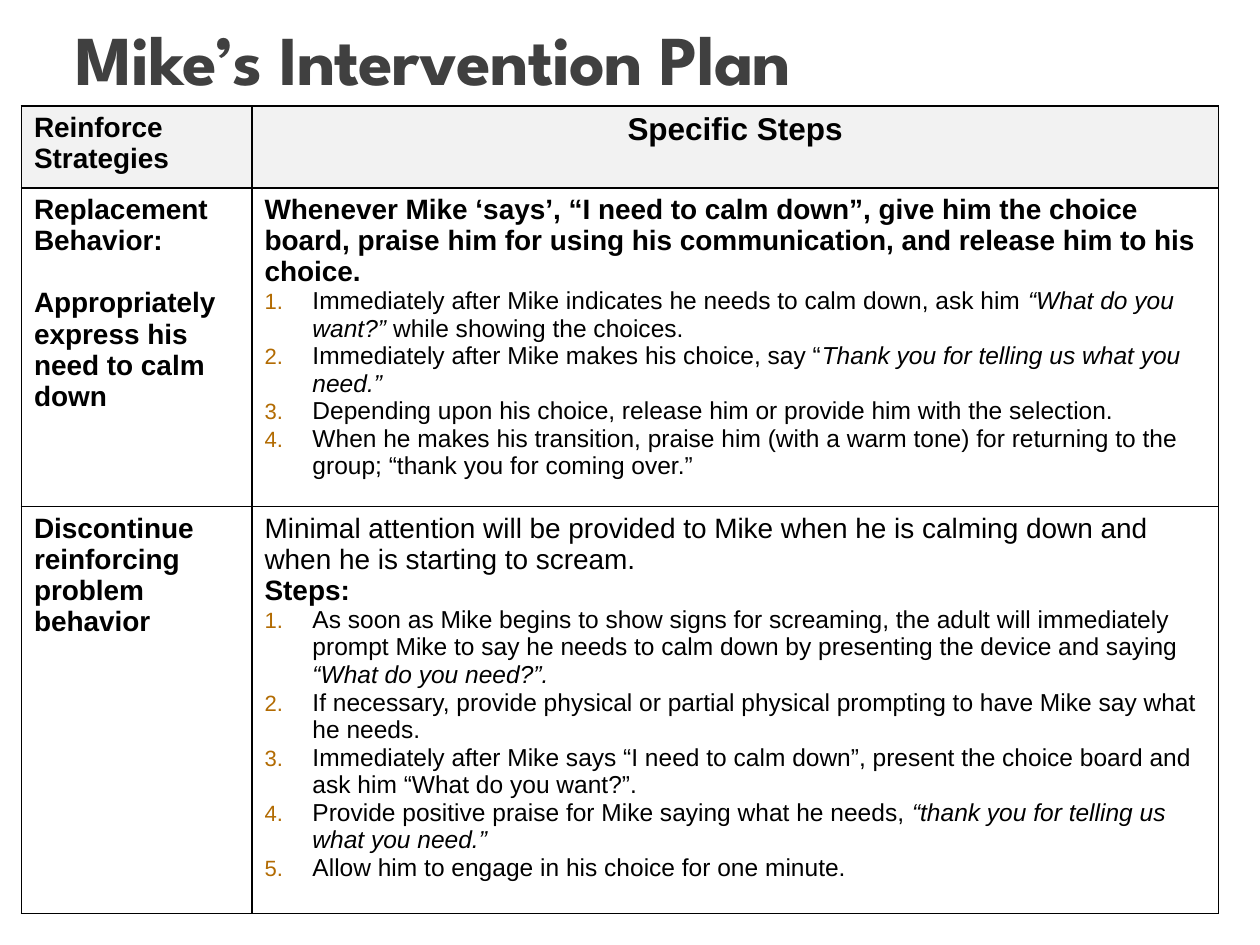
import pptx
import pptx.dml.color
import pptx.enum.text
import pptx.oxml
import pptx.oxml.ns
import pptx.util
from pptx.util import Inches

BODY_FONT = "Arial"
TITLE_FONT = "League Spartan"
COLUMN_WIDTHS = [1.83, 7.67]
ROW_HEIGHTS = [0.65, 2.53, 3.23]

REPLACEMENT_SUMMARY = (
    "Whenever Mike ‘says’, “I need to calm down”, give him the choice board, "
    "praise him for using his communication, and release him to his choice."
)
REPLACEMENT_STEPS = [
    ["Immediately after Mike indicates he needs to calm down, ask him ",
     "“What do you want?”", " while showing the choices."],
    ["Immediately after Mike makes his choice, say “",
     "Thank you for telling us what you need.”"],
    ["Depending upon his choice, release him or provide him with the selection."],
    ["When he makes his transition, praise him (with a warm tone) for returning "
     "to the group; “thank you for coming over.”"],
]
DISCONTINUE_SUMMARY = (
    "Minimal attention will be provided to Mike when he is calming down and "
    "when he is starting to scream."
)
DISCONTINUE_STEPS = [
    ["As soon as Mike begins to show signs for screaming, the adult will "
     "immediately prompt Mike to say he needs to calm down by presenting the "
     "device and saying ", "“What do you need?”."],
    ["If necessary, provide physical or partial physical prompting to have Mike "
     "say what he needs."],
    ["Immediately after Mike says “I need to calm down”, present the choice "
     "board and ask him “What do you want?”."],
    ["Provide positive praise for Mike saying what he needs, ",
     "“thank you for telling us what you need.”"],
    ["Allow him to engage in his choice for one minute."],
]


def color(hex_string):
    return pptx.dml.color.RGBColor.from_string(hex_string)


def xml_element(markup):
    namespace = pptx.oxml.ns.nsdecls("a")
    return pptx.oxml.parse_xml(markup.replace(">", f" {namespace}>", 1))


def format_run(run, size, bold=False, italic=False, font=BODY_FONT, fill="000000"):
    run.font.size = pptx.util.Pt(size)
    run.font.bold = bold
    run.font.italic = italic
    run.font.name = font
    run.font.color.rgb = color(fill)


def next_paragraph(text_frame):
    first = text_frame.paragraphs[0]
    return text_frame.add_paragraph() if first.runs else first


def add_statement(text_frame, text, size=16, bold=True):
    paragraph = next_paragraph(text_frame)
    paragraph.text = text
    format_run(paragraph.runs[0], size, bold)
    return paragraph


def add_steps(text_frame, steps):
    for step in steps:
        paragraph = next_paragraph(text_frame)
        properties = paragraph._p.get_or_add_pPr()
        properties.set("marL", str(Inches(0.38)))
        properties.set("indent", str(Inches(-0.38)))
        for markup in (
            '<a:buClr><a:srgbClr val="B26B02"/></a:buClr>',
            '<a:buSzPct val="90000"></a:buSzPct>',
            '<a:buFont typeface="Arial"></a:buFont>',
            '<a:buAutoNum type="arabicPeriod"></a:buAutoNum>',
        ):
            properties.append(xml_element(markup))
        for index, text in enumerate(step):
            run = paragraph.add_run()
            run.text = text
            format_run(run, 14, italic=index % 2 == 1)


def style_cell(cell, fill):
    properties = cell._tc.get_or_add_tcPr()
    for side in ("lnL", "lnR", "lnT", "lnB"):
        properties.append(xml_element(
            f'<a:{side} w="12700"><a:solidFill><a:srgbClr val="000000"/>'
            f'</a:solidFill></a:{side}>'
        ))
    cell.fill.solid()
    cell.fill.fore_color.rgb = color(fill)


def add_plan_table(slide):
    table = slide.shapes.add_table(
        len(ROW_HEIGHTS), len(COLUMN_WIDTHS),
        Inches(0.17), Inches(0.84), Inches(9.5), Inches(6.41),
    ).table
    table.first_row = False
    table.horz_banding = False
    for column, width in zip(table.columns, COLUMN_WIDTHS):
        column.width = Inches(width)
    for index, height in enumerate(ROW_HEIGHTS):
        table.rows[index].height = Inches(height)
        for cell in table.rows[index].cells:
            style_cell(cell, "F2F2F2" if index == 0 else "FFFFFF")
    return table


def add_title(slide, text):
    shape = slide.shapes.add_textbox(
        Inches(0.5), Inches(0.03), Inches(9.08), Inches(0.81)
    )
    text_frame = shape.text_frame
    text_frame.word_wrap = True
    text_frame.vertical_anchor = pptx.enum.text.MSO_ANCHOR.BOTTOM
    text_frame.text = text
    paragraph = text_frame.paragraphs[0]
    paragraph.line_spacing = 0.85
    run = paragraph.runs[0]
    format_run(run, 40, bold=True, font=TITLE_FONT, fill="404040")
    run.font._element.set("spc", "-50")


def main():
    presentation = pptx.Presentation()
    presentation.slide_width = Inches(10)
    presentation.slide_height = Inches(7.5)
    slide = presentation.slides.add_slide(presentation.slide_layouts[6])

    table = add_plan_table(slide)
    add_statement(table.cell(0, 0).text_frame, "Reinforce Strategies")
    heading = add_statement(table.cell(0, 1).text_frame, "Specific Steps", size=18)
    heading.alignment = pptx.enum.text.PP_ALIGN.CENTER

    behavior = table.cell(1, 0).text_frame
    add_statement(behavior, "Replacement Behavior:")
    goal = add_statement(behavior, "Appropriately express his need to calm down")
    goal.space_before = pptx.util.Pt(18)
    replacement = table.cell(1, 1).text_frame
    add_statement(replacement, REPLACEMENT_SUMMARY)
    add_steps(replacement, REPLACEMENT_STEPS)

    add_statement(table.cell(2, 0).text_frame, "Discontinue reinforcing problem behavior")
    discontinue = table.cell(2, 1).text_frame
    add_statement(discontinue, DISCONTINUE_SUMMARY, bold=False)
    add_statement(discontinue, "Steps:")
    add_steps(discontinue, DISCONTINUE_STEPS)

    add_title(slide, "Mike’s Intervention Plan")
    presentation.save("out.pptx")


if __name__ == "__main__":
    main()
